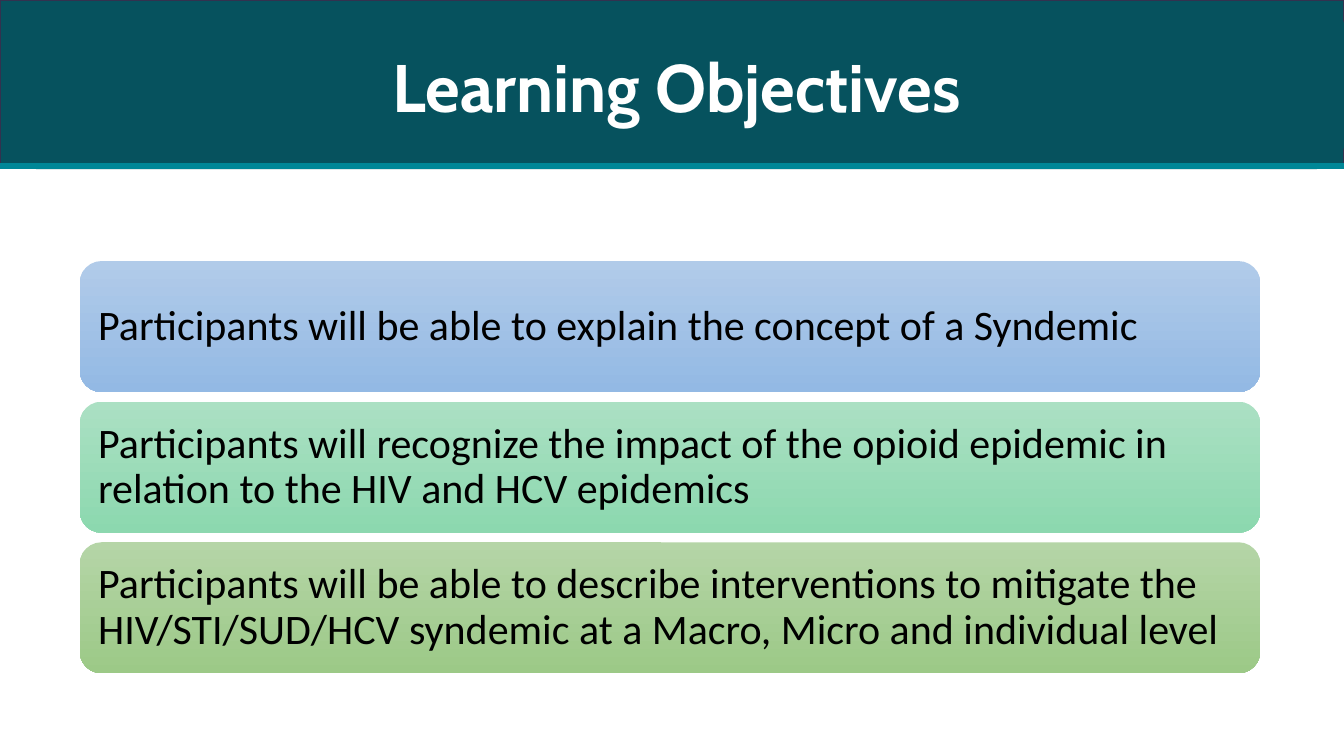
from pptx import Presentation
from pptx.dml.color import RGBColor
from pptx.enum.shapes import MSO_SHAPE
from pptx.enum.text import MSO_ANCHOR, PP_ALIGN
from pptx.util import Inches, Pt

TITLE = "Learning Objectives"
# Objective, gradient top, gradient bottom
GOALS = [
    ("Participants will be able to explain the concept of a Syndemic",
     "blue_top", "blue_end"),
    ("Participants will recognize the impact of the opioid epidemic in "
     "relation to the HIV and HCV epidemics",
     "mint_top", "mint_end"),
    ("Participants will be able to describe interventions to mitigate the "
     "HIV/STI/SUD/HCV syndemic at a Macro, Micro and individual level",
     "leaf_top", "leaf_end"),
]
COLORS = {
    "band": "06525E", "edge": "33324F", "rule": "008797",
    "white": "FFFFFF", "black": "000000",
    "blue_top": "B1CBE9", "blue_end": "93B9E4",
    "mint_top": "ABE0C3", "mint_end": "8CD8AF",
    "leaf_top": "B5D5A7", "leaf_end": "9CC987",
}
WIDTH, HEIGHT = 13.33, 7.5
LEFT, TOP, CARD_W, CARD_H, STEP = 0.79, 2.59, 11.71, 1.3, 1.395


def color(name):
    return RGBColor.from_string(COLORS[name])


def add_box(kind, left, top, width, height, fill=None, line=None):
    box = slide.shapes.add_shape(
        kind, Inches(left), Inches(top), Inches(width), Inches(height))
    box.shadow.inherit = False
    if fill:
        box.fill.solid()
        box.fill.fore_color.rgb = color(fill)
    if line:
        box.line.color.rgb = color(line)
        box.line.width = Pt(1)
    else:
        box.line.fill.background()
    return box


def write(box, text, font, size, ink, align, bold=False):
    frame = box.text_frame
    frame.word_wrap = True
    frame.vertical_anchor = MSO_ANCHOR.MIDDLE
    para = frame.paragraphs[0]
    para.text = text
    para.alignment = align
    para.font.name = font
    para.font.size = Pt(size)
    para.font.bold = bold
    para.font.color.rgb = color(ink)
    return frame


deck = Presentation()
deck.slide_width, deck.slide_height = Inches(WIDTH), Inches(HEIGHT)
slide = deck.slides.add_slide(deck.slide_layouts[6])

# Title band with a rule along its lower edge
add_box(MSO_SHAPE.RECTANGLE, 0, 0, WIDTH, 1.67, "band", "edge")
title = add_box(MSO_SHAPE.ROUNDED_RECTANGLE, 0.09, 0.02, 13.24, 1.65,
                "band", "band")
write(title, TITLE, "Cabin", 48, "white", PP_ALIGN.CENTER, True)
add_box(MSO_SHAPE.RECTANGLE, 0, 1.62, WIDTH, 0.05, "rule", "rule")

# Objective cards
for row, (text, *shades) in enumerate(GOALS):
    card = add_box(MSO_SHAPE.ROUNDED_RECTANGLE,
                   LEFT, TOP + row * STEP, CARD_W, CARD_H)
    card.fill.gradient()
    card.fill.gradient_angle = 270
    for stop, shade in zip(card.fill.gradient_stops, shades):
        stop.color.rgb = color(shade)
    frame = write(card, text, "Calibri", 30, "black", PP_ALIGN.LEFT)
    frame.margin_left = frame.margin_right = Inches(0.12)
    frame.margin_top = frame.margin_bottom = Inches(0.12)
    frame.paragraphs[0].line_spacing = 0.9

deck.save("out.pptx")
